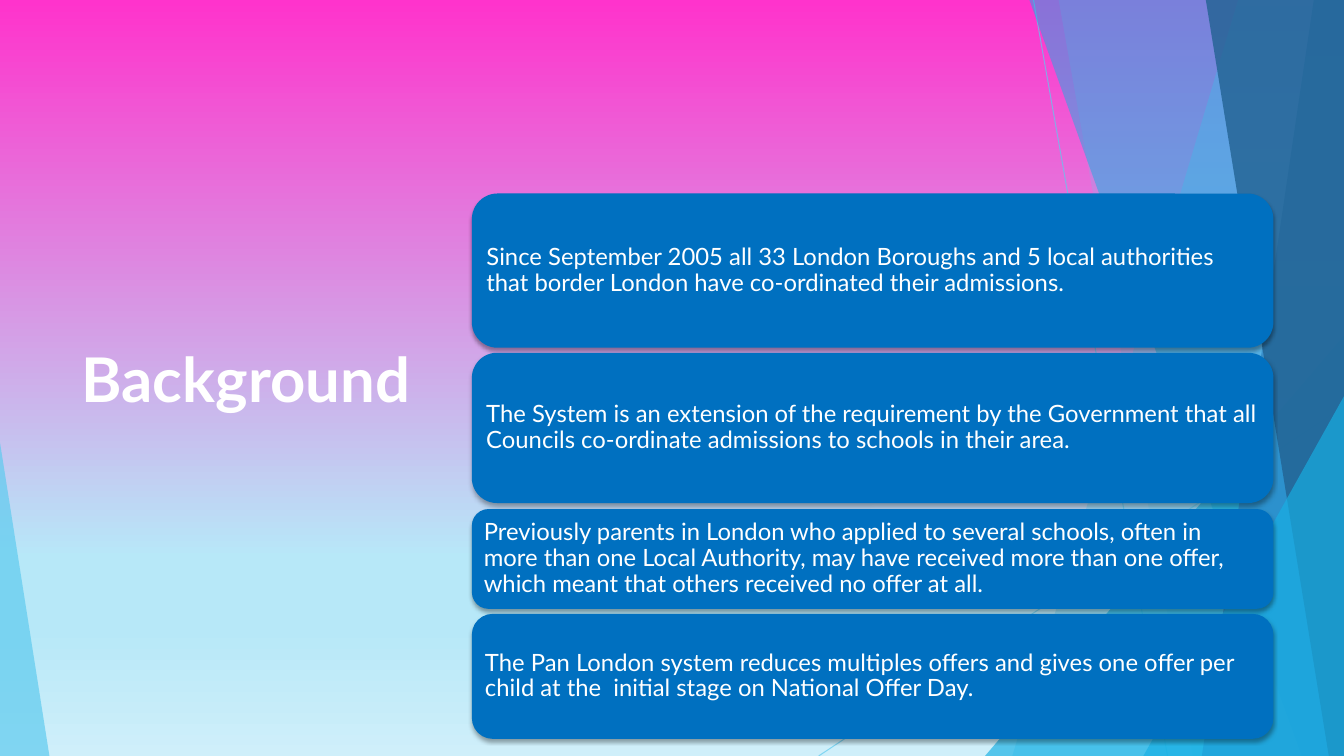
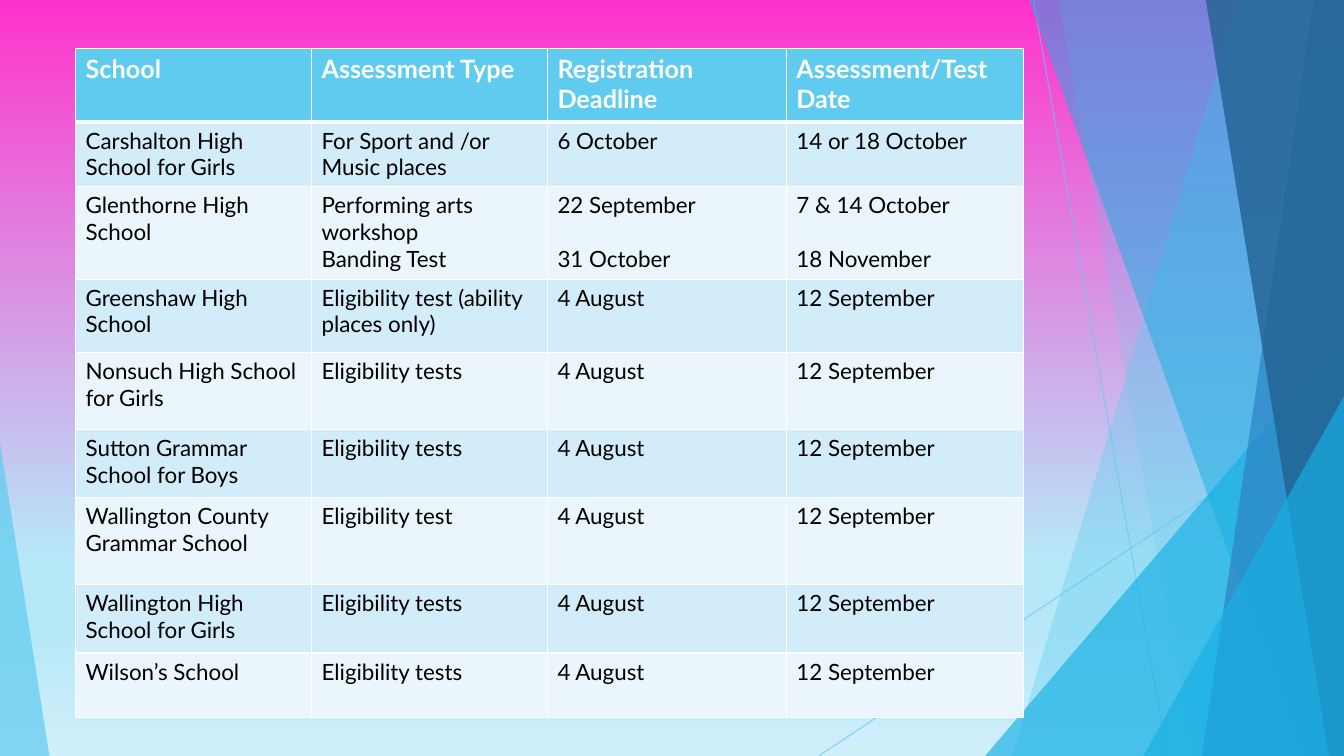
import lxml.etree
import pptx
import pptx.dml.color
import pptx.enum.shapes
import pptx.enum.text
import pptx.oxml
import pptx.oxml.ns
import pptx.util

Inches, Pt = pptx.util.Inches, pptx.util.Pt
MSO_SHAPE = pptx.enum.shapes.MSO_SHAPE
ANCHOR = pptx.enum.text.MSO_ANCHOR
qn = pptx.oxml.ns.qn

# Content
TITLE = "Background"
CARDS = [  # top, height, text
    (1.92, 1.53, "Since September 2005 all 33 London Boroughs and 5 local authorities "
                 "that border London have co-ordinated their admissions."),
    (3.50, 1.49, "The System is an extension of the requirement by the Government that "
                 "all Councils co-ordinate admissions to schools in their area."),
    (5.05, 0.99, "Previously parents in London who applied to several schools, often in "
                 "more than one Local Authority, may have received more than one offer, "
                 "which meant that others received no offer at all."),
    (6.09, 1.24, "The Pan London system reduces multiples offers and gives one offer per "
                 "child at the  initial stage on National Offer Day."),
]
HEADER = ("School", "Assessment Type", "Registration Deadline", "Assessment/Test Date")
GRAMMAR_DATES = ("4 August", "12 September")
SCHOOLS = [
    ("Carshalton High School for Girls", "For Sport and /or Music places",
     "6 October", "14 or 18 October"),
    ("Glenthorne High School", "Performing arts workshop\nBanding Test",
     "22 September\n31 October", "7 & 14 October\n18 November"),
    ("Greenshaw High School", "Eligibility test (ability places only)", *GRAMMAR_DATES),
    ("Nonsuch High School for Girls", "Eligibility tests", *GRAMMAR_DATES),
    ("Sutton Grammar School for Boys", "Eligibility tests", *GRAMMAR_DATES),
    ("Wallington County Grammar School", "Eligibility test", *GRAMMAR_DATES),
    ("Wallington High School for Girls", "Eligibility tests", *GRAMMAR_DATES),
    ("Wilson’s School", "Eligibility tests", *GRAMMAR_DATES),
]
COL_WIDTHS = (2.34, 2.34, 2.37, 2.35)
ROW_HEIGHTS = (0.73, 0.64, 0.92, 0.73, 0.76, 0.68, 0.86, 0.68, 0.64)

# Shared look
W, H = 13.33, 7.5
COLORS = {
    "sky": "5FCBEF", "cyan": "17B0E4", "blue": "2E83C3", "navy": "226292",
    "card": "0070C0", "white": "FFFFFF", "black": "000000",
    "band_dark": "D2ECF9", "band_light": "EAF6FC",
}
BACKGROUND = [(0, "FF33CC"), (74, "B7E8F8"), (83, "B7E8F8"), (100, "CFEFFA")]
FACETS = [  # kind, geometry, colour, opacity %
    ("line", (10.25, 0, 11.58, H), "sky", 70),
    ("line", (W, 4.03, 8.12, H), "sky", 70),
    ("band", (12.28, 10.04), "sky", 36),  # top x, bottom x
    ("band", (10.50, 11.83), "sky", 20),
    ("triangle", (9.77, 3.33, 3.56, 1), "cyan", 66),  # left, top, width, apex
    ("band", (10.21, 12.91), "cyan", 50),
    ("band", (13.03, 11.92), "blue", 70),
    ("band", (11.96, 13.18), "navy", 80),
    ("triangle", (11.34, 3.93, 1.99, 1), "cyan", 66),
    ("triangle", (0, 4.39, 0.49, 0), "sky", 70),
]
FONTS = {
    "title": {"size": Pt(44), "bold": True, "color": "white"},
    "card": {"size": Pt(17), "bold": False, "color": "white"},
    "header": {"size": Pt(18), "bold": True, "color": "white"},
    "cell": {"size": Pt(16), "bold": False, "color": "black"},
}


def rgb(name):
    return pptx.dml.color.RGBColor.from_string(COLORS[name])


def fill(obj, color):
    obj.fill.solid()
    obj.fill.fore_color.rgb = rgb(color)


def set_all(obj, values):
    for name, value in values.items():
        setattr(obj, name, value)


def write(tf, text, style, **para):
    """Fill a text frame, one paragraph per line."""
    look = dict(FONTS[style], name="Lato")
    color = look.pop("color")
    for i, line in enumerate(text.split("\n")):
        p = tf.paragraphs[0] if i == 0 else tf.add_paragraph()
        p.alignment = pptx.enum.text.PP_ALIGN.LEFT
        set_all(p, para)
        r = p.add_run()
        r.text = line
        set_all(r.font, look)
        r.font.color.rgb = rgb(color)


def set_background(master):
    bg = master.background.fill
    bg.gradient()
    bg.gradient_angle = 270
    stops = master.element.xpath("./p:cSld/p:bg//a:gsLst")[0]
    for old in list(stops):
        stops.remove(old)
    for pos, color in BACKGROUND:
        gs = lxml.etree.SubElement(stops, qn("a:gs"), pos=str(pos * 1000))
        lxml.etree.SubElement(gs, qn("a:srgbClr"), val=color)


def add_facet(shapes, kind, geo, color, opacity):
    if kind == "line":
        sp = shapes.add_connector(pptx.enum.shapes.MSO_CONNECTOR.STRAIGHT,
                                  *map(Inches, geo))
        sp.line.width = Pt(0.75)
        sp.line.color.rgb = rgb(color)
        lxml.etree.SubElement(sp.element.spPr, qn("a:effectLst"))
    else:
        if kind == "band":
            top_x, bottom_x = geo
            corners = [(W, 0), (W, H), (bottom_x, H)]
            builder = shapes.build_freeform(Inches(top_x), 0)
            builder.add_line_segments([(Inches(x), Inches(y)) for x, y in corners])
            sp = builder.convert_to_shape()
        else:
            left, top, width, apex = geo
            sp = shapes.add_shape(MSO_SHAPE.ISOSCELES_TRIANGLE,
                                  *map(Inches, (left, top, width, H - top)))
            sp.adjustments[0] = apex
        fill(sp, color)
        sp.line.fill.background()
        sp.shadow.inherit = False
    for clr in sp.element.spPr.xpath(".//a:srgbClr"):
        lxml.etree.SubElement(clr, qn("a:alpha"), val=str(opacity * 1000))
    return sp


def decorate_master(master, slide):
    """Draw the facets, then move them to the master so all slides share them."""
    set_background(master)
    for i, facet in enumerate(FACETS):
        el = add_facet(slide.shapes, *facet).element
        el.xpath(".//p:cNvPr")[0].set("id", str(100 + i))
        master.shapes.element.append(el)


def add_card(shapes, top, height, text):
    sp = shapes.add_shape(MSO_SHAPE.ROUNDED_RECTANGLE,
                          *map(Inches, (4.68, top, 7.95, height)))
    fill(sp, "card")
    sp.line.fill.background()
    sp.shadow.inherit = False
    effects = sp.element.spPr.find(qn("a:effectLst"))
    shadow = lxml.etree.SubElement(effects, qn("a:outerShdw"), blurRad=str(Pt(3)),
                                   dist=str(Pt(2)), dir="5400000", rotWithShape="0")
    clr = lxml.etree.SubElement(shadow, qn("a:srgbClr"), val=COLORS["black"])
    lxml.etree.SubElement(clr, qn("a:alpha"), val="35000")
    tf = sp.text_frame
    set_all(tf, {"word_wrap": True, "vertical_anchor": ANCHOR.MIDDLE})
    set_all(tf, {f"margin_{side}": Inches(0.07)
                 for side in ("left", "top", "right", "bottom")})
    write(tf, text, "card", line_spacing=0.9)


def set_borders(cell, widths):
    tc_pr = cell._tc.get_or_add_tcPr()
    for i, (side, width) in enumerate(widths.items()):
        ln = pptx.oxml.parse_xml(
            f'<a:ln{side} {pptx.oxml.ns.nsdecls("a")} w="{Pt(width)}"><a:solidFill>'
            f'<a:srgbClr val="{COLORS["white"]}"/></a:solidFill></a:ln{side}>')
        tc_pr.insert(i, ln)


def add_school_table(shapes):
    rows = [HEADER] + SCHOOLS
    size = sum(COL_WIDTHS), sum(ROW_HEIGHTS)
    table = shapes.add_table(len(rows), len(HEADER),
                             *map(Inches, (0.75, 0.48, *size))).table
    table.horz_banding = False
    for col, width in zip(table.columns, COL_WIDTHS):
        col.width = Inches(width)
    for r, (row, height) in enumerate(zip(rows, ROW_HEIGHTS)):
        table.rows[r].height = Inches(height)
        for c, text in enumerate(row):
            cell = table.cell(r, c)
            fill(cell, "sky" if r == 0 else ("band_light", "band_dark")[r % 2])
            set_borders(cell, {"L": 1, "R": 1, "T": 3 if r == 1 else 1,
                               "B": 3 if r == 0 else 1})
            write(cell.text_frame, text, "cell" if r else "header")
            # A second date lines up with the last line of its test
            if c >= 2:
                for p in cell.text_frame.paragraphs[1:]:
                    p.space_before = Pt(19.2)


def main():
    prs = pptx.Presentation()
    prs.slide_width, prs.slide_height = Inches(W), Inches(H)

    # Slide 1: title and cards
    s = prs.slides.add_slide(prs.slide_layouts[5])
    decorate_master(prs.slide_master, s)
    title = s.shapes.title
    set_all(title, dict(zip(("left", "top", "width", "height"),
                            map(Inches, (0.71, 1.51, 3.88, 4.48)))))
    set_all(title.text_frame, {"word_wrap": True, "vertical_anchor": ANCHOR.MIDDLE,
                               "auto_size": pptx.enum.text.MSO_AUTO_SIZE.NONE})
    write(title.text_frame, TITLE, "title")
    for card in CARDS:
        add_card(s.shapes, *card)

    # Slide 2: table of schools
    s = prs.slides.add_slide(prs.slide_layouts[6])
    add_school_table(s.shapes)

    prs.save("out.pptx")


if __name__ == "__main__":
    main()
